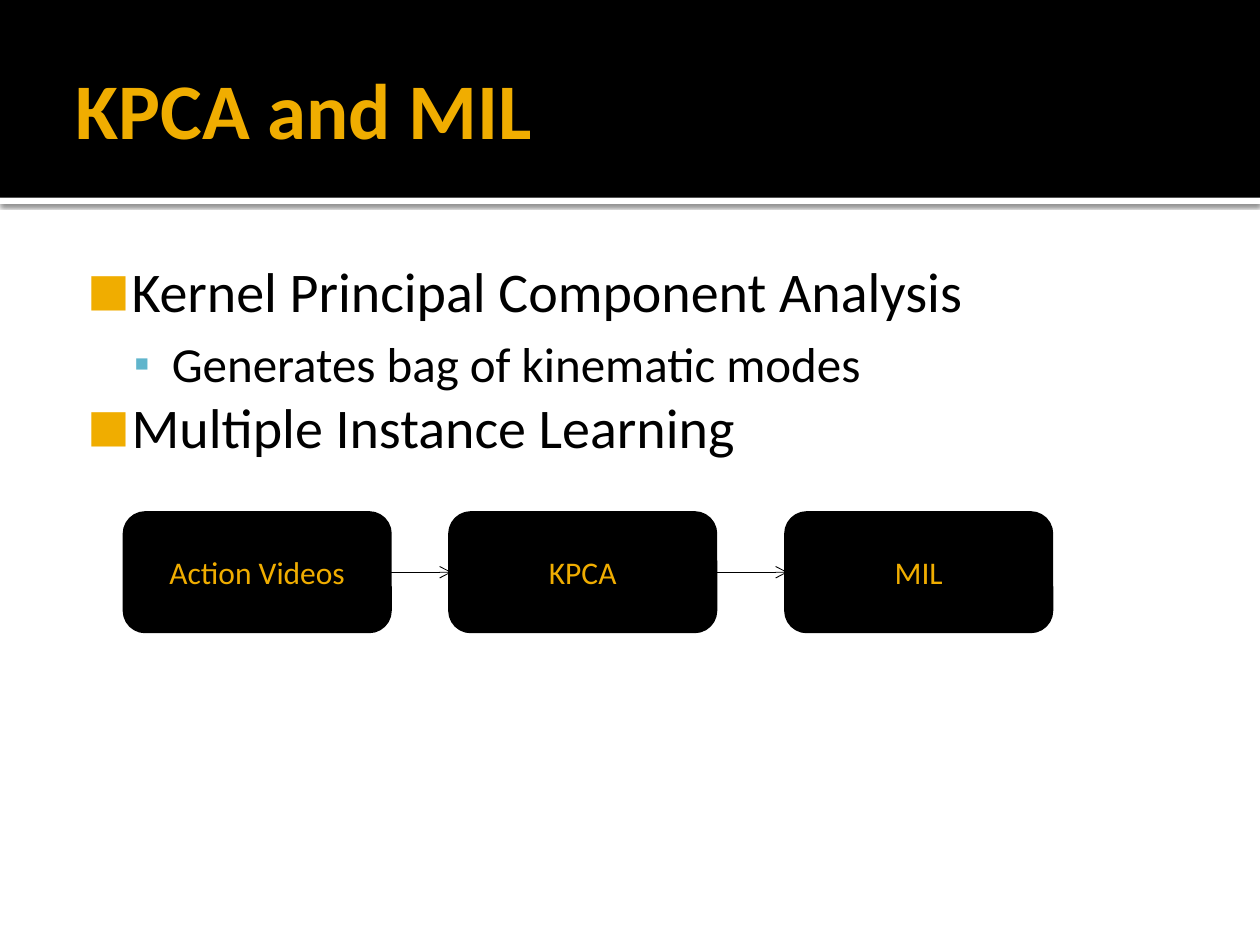
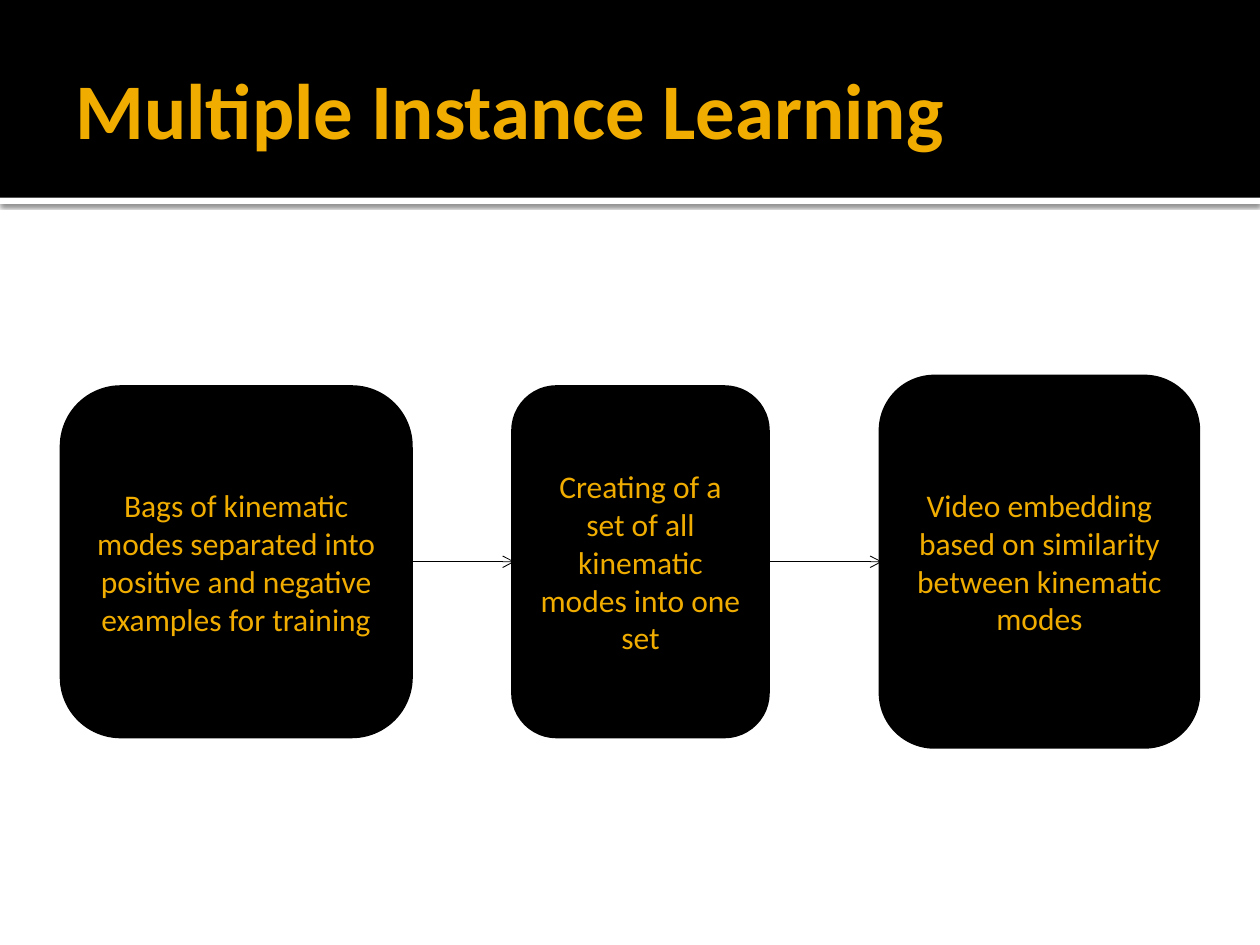
"""Build two slides on kernel PCA and multiple instance learning."""
from dataclasses import dataclass
from itertools import pairwise

from lxml.etree import SubElement
from pptx import Presentation
from pptx.dml.color import RGBColor
from pptx.enum.shapes import MSO_CONNECTOR, MSO_SHAPE
from pptx.enum.text import MSO_ANCHOR, MSO_AUTO_SIZE, PP_ALIGN
from pptx.oxml import parse_xml
from pptx.oxml.ns import qn
from pptx.util import Pt


@dataclass(frozen=True)
class Theme:
    font: str = "Calibri"
    black: str = "000000"
    white: str = "FFFFFF"
    gold: str = "F0AD00"
    blue: str = "60B5CC"
    title_size: float = 45
    box_size: float = 18
    box_line: float = 3.78
    arrow_line: float = 0.5


THEME = Theme()
WIDTH, HEIGHT = 720, 540
BAND_HEIGHT, STRIP_HEIGHT = 113, 3.6
TITLE_AREA = (36, 12, 648, 99)
BODY_AREA = (36, 139.5, 648, 364.5)
TITLE_INSETS = (7.2, 3.6, 3.6, 3.6)
BODY_INSETS = (4.6, 7.2, 7.2, 3.6)

LEVELS = [
    dict(size=32, before=0, left=34.56, hanging=25.2, mark="■", color=THEME.gold, percent=80),
    dict(size=28, before=5.6, left=57.6, hanging=21.6, mark="▪", color=THEME.blue, percent=90),
]

SLIDES = [
    {
        "title": "KPCA and MIL",
        "bullets": [
            (0, "Kernel Principal Component Analysis"),
            (1, "Generates bag of kinematic modes"),
            (0, "Multiple Instance Learning"),
        ],
        "middle": 327,
        "steps": [
            ("Action Videos", 72, 150, 66),
            ("KPCA", 258, 150, 66),
            ("MIL", 450, 150, 66),
        ],
    },
    {
        "title": "Multiple Instance Learning",
        "bullets": [],
        "middle": 321,
        "steps": [
            ("Bags of kinematic modes separated into positive and negative examples for training",
             36, 198, 198),
            ("Creating of a set of all kinematic modes into one set", 294, 144, 198),
            ("Video embedding based on similarity between kinematic modes", 504, 180, 210),
        ],
    },
]

DRAWING = 'xmlns:a="http://schemas.openxmlformats.org/drawingml/2006/main"'
STRIP_SHADOW = (
    f'<a:effectLst {DRAWING}><a:outerShdw blurRad="{Pt(2.5)}" dist="{Pt(0.8)}" dir="5400000">'
    f'<a:srgbClr val="{THEME.black}"><a:alpha val="60000"/></a:srgbClr>'
    "</a:outerShdw></a:effectLst>"
)


def rgb(color):
    """Turn a hex string into a colour."""
    return RGBColor.from_string(color)


def style_font(font, size, color, bold=False):
    """Apply the theme font with a size, colour and weight."""
    font.name, font.size, font.bold = THEME.font, Pt(size), bold
    font.color.rgb = rgb(color)


def add_filled(page, kind, area, color):
    """Add a flat preset shape without outline or shadow."""
    shape = page.shapes.add_shape(kind, *map(Pt, area))
    shape.shadow.inherit = False
    shape.fill.solid()
    shape.fill.fore_color.rgb = rgb(color)
    shape.line.fill.background()
    return shape


def add_shared_band(deck, page):
    """Build the header band and move it to the slide master."""
    strip = add_filled(page, MSO_SHAPE.RECTANGLE, (0, BAND_HEIGHT, WIDTH, STRIP_HEIGHT), THEME.white)
    properties = strip.element.spPr
    properties.replace(properties.find(qn("a:effectLst")), parse_xml(STRIP_SHADOW))
    band = add_filled(page, MSO_SHAPE.RECTANGLE, (0, 0, WIDTH, BAND_HEIGHT), THEME.black)
    tree = deck.slide_master.shapes.element
    for position, shape in enumerate((strip, band), start=2):
        tree.insert(position, shape.element)


def place(placeholder, area, insets):
    """Move a placeholder and return its text frame with fixed insets."""
    placeholder.left, placeholder.top, placeholder.width, placeholder.height = map(Pt, area)
    frame = placeholder.text_frame
    frame.margin_left, frame.margin_top, frame.margin_right, frame.margin_bottom = map(Pt, insets)
    frame.word_wrap, frame.auto_size = True, MSO_AUTO_SIZE.NONE
    return frame


def fill_title(page, text):
    """Write the slide title."""
    frame = place(page.shapes.title, TITLE_AREA, TITLE_INSETS)
    frame.text, frame.vertical_anchor = text, MSO_ANCHOR.MIDDLE
    para = frame.paragraphs[0]
    para.alignment = PP_ALIGN.LEFT
    style_font(para.font, THEME.title_size, THEME.gold, bold=True)


def set_bullet(para, level):
    """Give a paragraph the indent and bullet of its level."""
    properties = para._p.get_or_add_pPr()
    properties.set("marL", str(Pt(level["left"])))
    properties.set("indent", str(-Pt(level["hanging"])))
    color = SubElement(properties, qn("a:buClr"))
    SubElement(color, qn("a:srgbClr"), val=level["color"])
    SubElement(properties, qn("a:buSzPct"), val=str(level["percent"] * 1000))
    SubElement(properties, qn("a:buFont"), typeface=THEME.font)
    SubElement(properties, qn("a:buChar"), char=level["mark"])


def fill_body(page, bullets):
    """Write the bulleted list."""
    frame = place(page.placeholders[1], BODY_AREA, BODY_INSETS)
    frame.text = "\n".join(text for _, text in bullets)
    for para, (depth, _) in zip(frame.paragraphs, bullets):
        level = LEVELS[depth]
        para.level, para.space_before = depth, Pt(level["before"])
        set_bullet(para, level)
        style_font(para.font, level["size"], THEME.black)


def add_step(page, middle, text, left, width, height):
    """Add one rounded step box centred on the flow's middle line."""
    area = (left, middle - height / 2, width, height)
    box = add_filled(page, MSO_SHAPE.ROUNDED_RECTANGLE, area, THEME.black)
    box.line.color.rgb = rgb(THEME.black)
    box.line.width = Pt(THEME.box_line)
    frame = box.text_frame
    frame.text, frame.word_wrap, frame.vertical_anchor = text, True, MSO_ANCHOR.MIDDLE
    para = frame.paragraphs[0]
    para.alignment = PP_ALIGN.CENTER
    style_font(para.font, THEME.box_size, THEME.gold)
    return box


def add_arrow(page, source, target):
    """Connect the right side of one box to the left side of the next."""
    arrow = page.shapes.add_connector(MSO_CONNECTOR.STRAIGHT, 0, 0, 0, 0)
    arrow.begin_connect(source, 3)
    arrow.end_connect(target, 1)
    arrow.line.color.rgb = rgb(THEME.black)
    arrow.line.width = Pt(THEME.arrow_line)
    SubElement(arrow.line._get_or_add_ln(), qn("a:tailEnd"), type="arrow")
    SubElement(arrow.element.spPr, qn("a:effectLst"))


def main():
    """Build and save the deck."""
    deck = Presentation()
    deck.slide_width, deck.slide_height = Pt(WIDTH), Pt(HEIGHT)
    for number, content in enumerate(SLIDES):
        page = deck.slides.add_slide(deck.slide_layouts[1 if content["bullets"] else 5])
        if number == 0:
            add_shared_band(deck, page)
        fill_title(page, content["title"])
        if content["bullets"]:
            fill_body(page, content["bullets"])
        boxes = [add_step(page, content["middle"], *step) for step in content["steps"]]
        for source, target in pairwise(boxes):
            add_arrow(page, source, target)
    deck.save("out.pptx")


if __name__ == "__main__":
    main()
